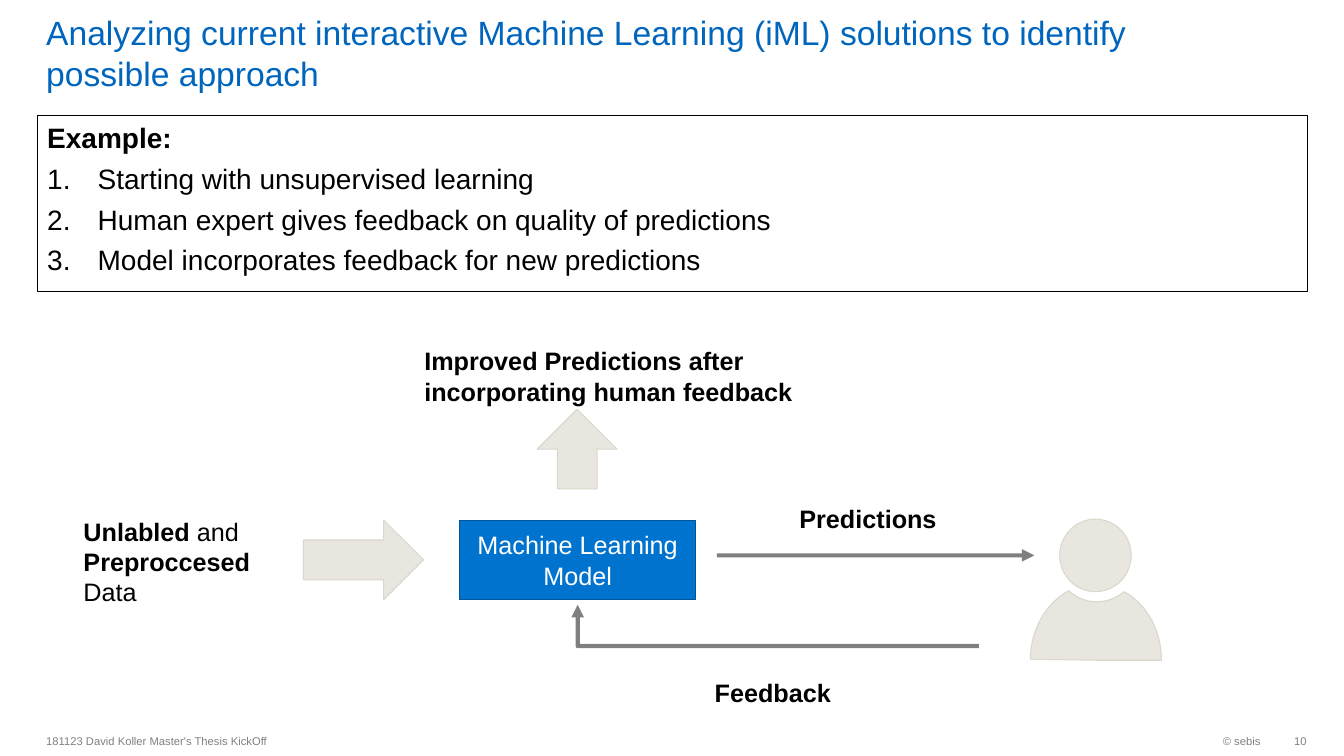
from lxml import etree
from pptx import Presentation
from pptx.dml.color import RGBColor
from pptx.enum.shapes import MSO_CONNECTOR, MSO_SHAPE
from pptx.enum.text import MSO_ANCHOR, PP_ALIGN
from pptx.oxml.ns import qn
from pptx.util import Inches, Pt

RECTANGLE, OVAL, ARROW = MSO_SHAPE.RECTANGLE, MSO_SHAPE.OVAL, MSO_SHAPE.RIGHT_ARROW
STRAIGHT, ELBOW = MSO_CONNECTOR.STRAIGHT, MSO_CONNECTOR.ELBOW
TOP, MIDDLE, BOTTOM = MSO_ANCHOR.TOP, MSO_ANCHOR.MIDDLE, MSO_ANCHOR.BOTTOM
LEFT, CENTER, RIGHT = PP_ALIGN.LEFT, PP_ALIGN.CENTER, PP_ALIGN.RIGHT
FONT = "Arial"
COLORS = {"title": "0065BD", "text": "000000", "footer": "808080", "white": "FFFFFF",
          "model": "0073CF", "model_line": "005599",
          "beige": "E8E6DF", "beige_line": "DAD7CB"}


def color(name):
    return RGBColor.from_string(COLORS[name])


def write(shape, paragraphs, size, ink="text", align=LEFT, anchor=TOP):
    """Fill a shape with paragraphs, each a list of (text, bold) spans."""
    frame = shape.text_frame
    frame.word_wrap = True
    frame.vertical_anchor = anchor
    for index, spans in enumerate(paragraphs):
        para = frame.paragraphs[0] if index == 0 else frame.add_paragraph()
        para.alignment = align
        for text, bold in spans:
            span = para.add_run()
            span.text = text
            span.font.name, span.font.size, span.font.bold = FONT, Pt(size), bold
            span.font.color.rgb = color(ink)
    return frame


def add_text(page, box, paragraphs, size, **style):
    return write(page.shapes.add_textbox(*map(Inches, box)), paragraphs, size, **style)


def paint(shape, fill, line, width=0.75):
    shape.shadow.inherit = False
    if fill:
        shape.fill.solid()
        shape.fill.fore_color.rgb = color(fill)
    else:
        shape.fill.background()
    shape.line.color.rgb = color(line)
    shape.line.width = Pt(width)


def add_shape(page, kind, box, fill="beige", line="beige_line", width=0.75):
    shape = page.shapes.add_shape(kind, *map(Inches, box))
    paint(shape, fill, line, width)
    return shape


def add_flow(page, kind, start, end):
    """Half-transparent black line with an arrowhead at its end."""
    flow = page.shapes.add_connector(kind, *map(Inches, start + end))
    flow.line.color.rgb = color("text")
    flow.line.width = Pt(3)
    properties = flow._element.spPr
    ink = properties.find(".//" + qn("a:srgbClr"))
    etree.SubElement(ink, qn("a:alpha"), val="50000")
    etree.SubElement(flow.line._get_or_add_ln(), qn("a:tailEnd"), type="triangle")
    etree.SubElement(properties, qn("a:effectLst"))
    if kind == ELBOW:
        properties.find(qn("a:prstGeom")).set("prst", "bentConnector2")


def add_title(page, box):
    title = "Analyzing current interactive Machine Learning (iML) solutions to identify possible approach"
    frame = add_text(page, box, [[(title, False)]], 24, ink="title", anchor=BOTTOM)
    frame.margin_top = frame.margin_bottom = 0


def add_example(page, box):
    steps = ["Starting with unsupervised learning",
             "Human expert gives feedback on quality of predictions",
             "Model incorporates feedback for new predictions"]
    panel = add_shape(page, RECTANGLE, box, fill=None, line="text")
    frame = write(panel, [[("Example:", True)]] + [[(step, False)] for step in steps], 20)
    for para in frame.paragraphs[1:]:
        para.space_before = Pt(5)
        properties = para._p.get_or_add_pPr()
        properties.set("marL", str(Inches(0.5)))
        properties.set("indent", str(-Inches(0.5)))
        etree.SubElement(properties, qn("a:buFont"), typeface="+mj-lt")
        etree.SubElement(properties, qn("a:buAutoNum"), type="arabicPeriod")


def curve_points(start, first, second, end, steps=16):
    """Points along a cubic curve, without its start."""
    for step in range(1, steps + 1):
        t = step / steps
        weights = ((1 - t) ** 3, 3 * t * (1 - t) ** 2, 3 * t * t * (1 - t), t ** 3)
        yield tuple(sum(weight * point[axis] for weight, point
                        in zip(weights, (start, first, second, end))) for axis in (0, 1))


def add_expert(page, left, top):
    """Human figure: a round head above curved shoulders."""
    add_shape(page, OVAL, (left + 0.29, top, 0.71, 0.72))
    curves = [((0.38, 0.71), (0.46, 0.78), (0.55, 0.82), (0.66, 0.82)),
              ((0.66, 0.82), (0.76, 0.82), (0.86, 0.78), (0.93, 0.72)),
              ((0.93, 0.72), (1.15, 0.84), (1.3, 1.1), (1.3, 1.4)),
              ((0, 1.39), (0, 1.09), (0.16, 0.83), (0.38, 0.71))]
    outline = [curves[0][0]]
    for curve in curves[:3]:
        outline += curve_points(*curve)
    outline += [(0.65, 1.4), curves[3][0], *curve_points(*curves[3])]
    points = [(Inches(left + x), Inches(top + y)) for x, y in outline]
    builder = page.shapes.build_freeform(*points[0])
    builder.add_line_segments(points[1:], close=True)
    paint(builder.convert_to_shape(), "beige", "beige_line")


def add_learning_loop(page, left, top):
    """Data, model, predictions and feedback, placed from the top left corner."""
    def place(x, y, *size):
        return (left + x, top + y, *size)

    model = add_shape(page, RECTANGLE, place(3.83, 1.78, 2.34, 0.79), "model", "model_line", 0.85)
    write(model, [[("Machine Learning Model", False)]], 18, "white", CENTER, MIDDLE)
    add_shape(page, ARROW, place(2.28, 1.78, 1.19, 0.79))
    add_shape(page, ARROW, place(4.6, 0.68, 0.79, 0.79)).rotation = 270
    add_expert(page, *place(9.49, 1.77))
    add_flow(page, STRAIGHT, place(6.38, 2.13), place(9.53, 2.13))
    add_flow(page, ELBOW, place(8.98, 3.03), place(5, 2.62))

    data = [[("Unlabled ", True), ("and", False)], [("Preproccesed", True)], [("Data", False)]]
    add_text(page, place(0, 1.69, 1.94, 1.01), data, 18)
    labels = [("Improved Predictions after incorporating human feedback", (3.38, 0, 3.98, 0.71)),
              ("Predictions", (7.1, 1.56, 1.59, 0.4)),
              ("Feedback", (6.26, 3.29, 1.37, 0.4))]
    for label, box in labels:
        add_text(page, place(*box), [[(label, True)]], 18)


def add_footer(page, top):
    parts = [("181123 David Koller Master's Thesis KickOff", 0.36, 6.3, LEFT),
             ("© sebis", 10.26, 2.34, RIGHT),
             ("10", 12.6, 0.36, RIGHT)]
    for text, left, width, align in parts:
        frame = add_text(page, (left, top, width, 0.32), [[(text, False)]], 8,
                         ink="footer", align=align, anchor=MIDDLE)
        if text == "10":
            frame.margin_right = 0


def main():
    deck = Presentation()
    deck.slide_width, deck.slide_height = Inches(13.33), Inches(7.5)
    page = deck.slides.add_slide(deck.slide_layouts[6])
    add_title(page, (0.36, 0.13, 11.58, 0.79))
    add_example(page, (0.37, 1.15, 12.6, 1.74))
    add_learning_loop(page, 0.73, 3.38)
    add_footer(page, 7.19)
    deck.save("out.pptx")


if __name__ == "__main__":
    main()
